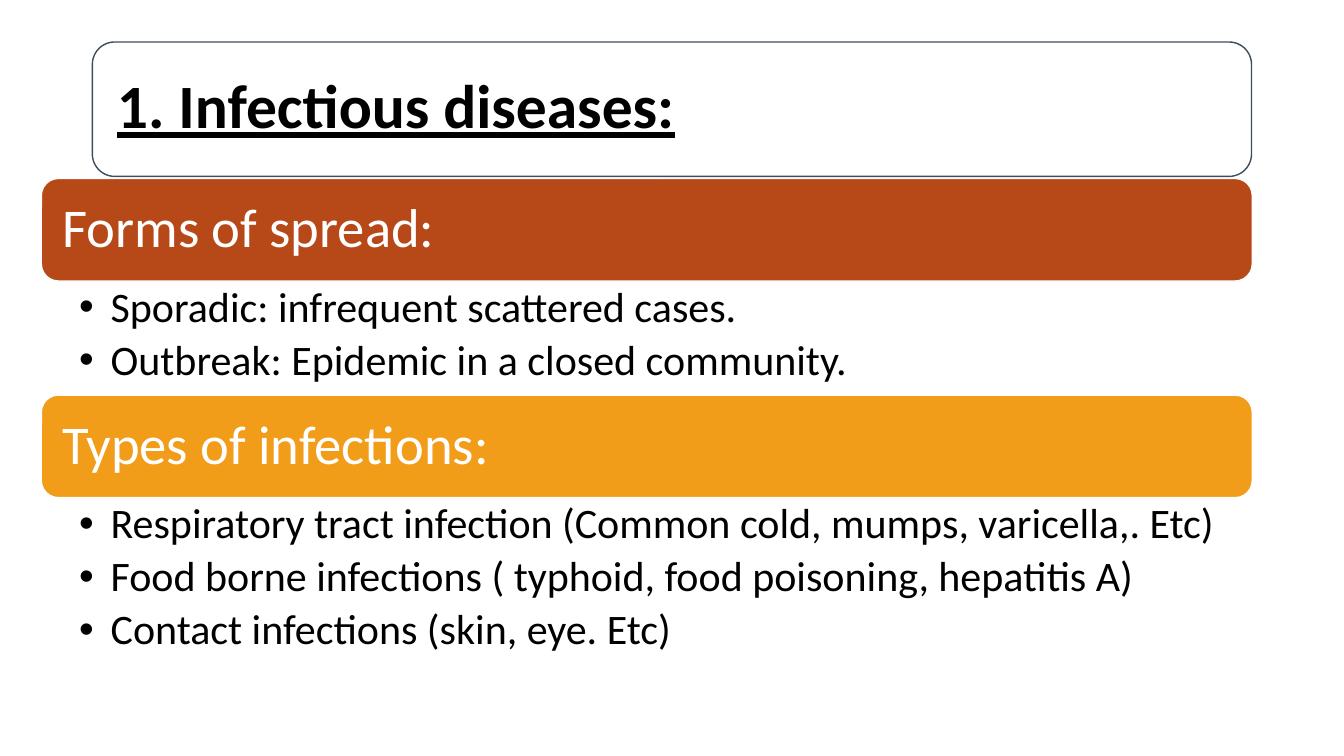
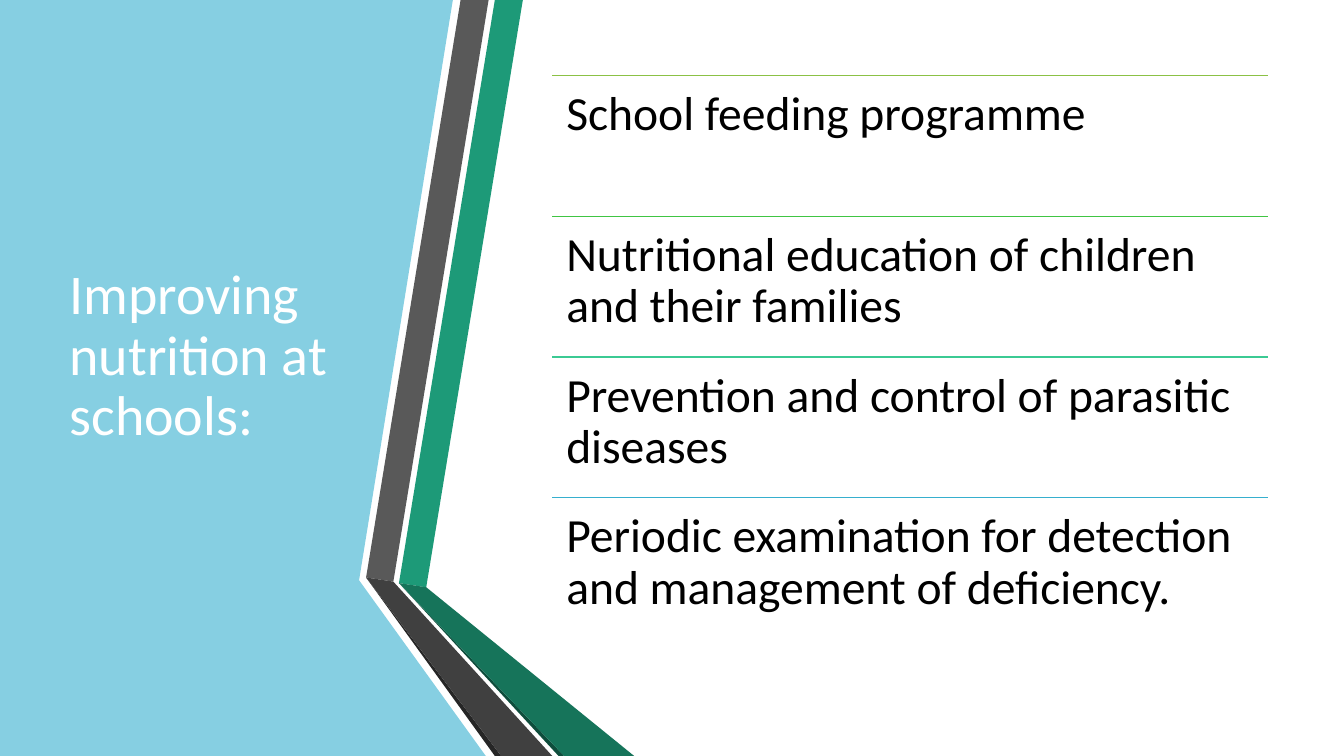
from dataclasses import dataclass

from lxml import etree
from pptx import Presentation
from pptx.dml.color import RGBColor
from pptx.enum import shapes, text
from pptx.oxml import ns
from pptx.util import Pt


@dataclass(frozen=True)
class Theme:
    font: str = "Calibri"
    # Type sizes
    heading: int = 44
    title: int = 40
    band: int = 39
    topic: int = 34
    item: int = 30
    # Colours
    ink: str = "000000"
    paper: str = "FFFFFF"
    frame: str = "3E4C60"
    rust: str = "B74919"
    amber: str = "F19D19"
    sky: str = "86CFE2"
    greens: tuple = ("1D9A78", "0E4D3C", "16745A")  # upper, edge, lower
    greys: tuple = ("595959", "262626", "404040")
    rules: tuple = ("8BC145", "40C543", "3BCA93", "36AFCE")


class Deck:
    """Holds the theme and the current slide; all lengths are in points."""

    def __init__(self, theme):
        self.theme = theme
        self.presentation = Presentation()
        self.presentation.slide_width = Pt(960)
        self.presentation.slide_height = Pt(540)
        self.slide = None

    def new_slide(self, layout_name):
        layout = self.presentation.slide_layouts.get_by_name(layout_name)
        self.slide = self.presentation.slides.add_slide(layout)

    # Shared styling
    def place(self, shape, box):
        shape.left, shape.top, shape.width, shape.height = map(Pt, box)

    def paint(self, shape, fill, line=None):
        shape.shadow.inherit = False
        shape.fill.solid()
        shape.fill.fore_color.rgb = RGBColor.from_string(fill)
        if line:
            shape.line.color.rgb = RGBColor.from_string(line)
            shape.line.width = Pt(1)
        else:
            shape.line.fill.background()

    def set_text(self, shape, lines, size, colour, insets,
                 middle=False, after=0):
        frame = shape.text_frame
        frame.text = "\n".join(lines)
        frame.word_wrap = True
        frame.auto_size = text.MSO_AUTO_SIZE.NONE
        frame.vertical_anchor = (text.MSO_ANCHOR.MIDDLE if middle
                                 else text.MSO_ANCHOR.TOP)
        (frame.margin_left, frame.margin_top,
         frame.margin_right, frame.margin_bottom) = map(Pt, insets)
        for paragraph in frame.paragraphs:
            paragraph.alignment = text.PP_ALIGN.LEFT
            paragraph.line_spacing = 0.9
            paragraph.space_before = Pt(0)
            paragraph.space_after = Pt(after)
            paragraph.font.name = self.theme.font
            paragraph.font.size = Pt(size)
            paragraph.font.color.rgb = RGBColor.from_string(colour)
        return frame.paragraphs

    # Elements
    def title(self, words, box, size, colour, inset, strong=False):
        title = self.slide.shapes.title
        title.element.getparent().append(title.element)  # bring to front
        self.place(title, box)
        paragraph = self.set_text(title, [words], size, colour, [inset] * 4,
                                  middle=True)[0]
        if strong:
            paragraph.font.bold = paragraph.font.underline = True

    def rounded(self, box, fill, line):
        shape = self.slide.shapes.add_shape(
            shapes.MSO_SHAPE.ROUNDED_RECTANGLE, *map(Pt, box))
        self.paint(shape, fill, line)
        return shape

    def band(self, words, box, fill):
        shape = self.rounded(box, fill, self.theme.paper)
        self.set_text(shape, [words], self.theme.band, self.theme.paper,
                      [11.5] * 4, middle=True)

    def bullets(self, index, items, box):
        body = self.slide.placeholders[index]
        self.place(body, box)
        for paragraph in self.set_text(body, items, self.theme.item,
                                       self.theme.ink, (27, 3.5, 21.5, 3.5),
                                       after=5.5):
            properties = paragraph._p.get_or_add_pPr()
            properties.set("marL", str(Pt(22.5)))
            properties.set("indent", str(Pt(-22.5)))

    def topic(self, words, box, colour):
        left, top, width, _ = box
        rule = self.slide.shapes.add_connector(
            shapes.MSO_CONNECTOR.STRAIGHT,
            Pt(left), Pt(top), Pt(left + width), Pt(top))
        rule.line.color.rgb = RGBColor.from_string(colour)
        rule.line.width = Pt(1)
        etree.SubElement(rule.element.spPr, ns.qn("a:effectLst"))
        label = self.slide.shapes.add_textbox(*map(Pt, box))
        self.set_text(label, [words], self.theme.topic, self.theme.ink,
                      [10] * 4)

    def polygon(self, points, fill):
        start, *rest = [(Pt(x), Pt(y)) for x, y in points]
        builder = self.slide.shapes.build_freeform(*start)
        builder.add_line_segments(rest, close=True)
        self.paint(builder.convert_to_shape(), fill)

    def ribbon(self, top, fold, foot, colours):
        """Folded strip: top x pair, two fold points, three foot x values."""
        left, right = fold
        head = [(x, 0) for x in top]
        edge, middle, end = [(x, 540) for x in foot]
        outlines = ([*head, right, left],
                    [left, edge, middle],
                    [left, middle, end, right])
        for points, colour in zip(outlines, colours):
            self.polygon(points, colour)


def infectious_diseases(deck):
    theme = deck.theme
    deck.new_slide("Two Content")

    # Framed title
    deck.rounded((66, 30, 828, 96), theme.paper, theme.frame)
    deck.title("1. Infectious diseases:", (70.5, 34.5, 819, 86.5),
               theme.heading, theme.ink, 13, strong=True)

    # Bands, each with its list beneath
    sections = (
        ("Forms of spread:", theme.rust, 81.5,
         ("Sporadic: infrequent scattered cases.",
          "Outbreak: Epidemic in a closed community.")),
        ("Types of infections:", theme.amber, 124,
         ("Respiratory tract infection (Common cold, mumps, varicella,. Etc)",
          "Food borne infections ( typhoid, food poisoning, hepatitis A)",
          "Contact infections (skin, eye. Etc)")),
    )
    left, top, width, band_height = 29.5, 127.5, 865, 73.25
    for index, (heading, fill, list_height, items) in enumerate(sections, 1):
        deck.band(heading, (left, top, width, band_height), fill)
        top += band_height
        deck.bullets(index, items, (left, top, width, list_height))
        top += list_height


def school_nutrition(deck):
    theme = deck.theme
    deck.new_slide("Title Only")

    # Side panel and folded ribbons
    deck.polygon([(0, 0), (323.5, 0), (256.5, 414.5), (347, 540), (0, 540)],
                 theme.sky)
    deck.ribbon((353.5, 373.5), ((285, 416.5), (304.5, 419.5)),
                (399, 403, 453), theme.greens)
    deck.ribbon((329, 349), ((261.5, 412.5), (281, 415.5)),
                (353.5, 358, 394.5), theme.greys)
    deck.title("Improving nutrition at schools:", (42.5, 54, 219, 402),
               theme.title, theme.paper, 7.2)

    # Ruled topics
    topics = ("School feeding programme",
              "Nutritional education of children and their families",
              "Prevention and control of parasitic diseases",
              "Periodic examination for detection and management of deficiency.")
    pitch = 100.5
    for row, (words, colour) in enumerate(zip(topics, theme.rules)):
        deck.topic(words, (394.5, 54 + row * pitch, 511.5, pitch), colour)


def main():
    deck = Deck(Theme())
    infectious_diseases(deck)
    school_nutrition(deck)
    deck.presentation.save("out.pptx")


if __name__ == "__main__":
    main()
